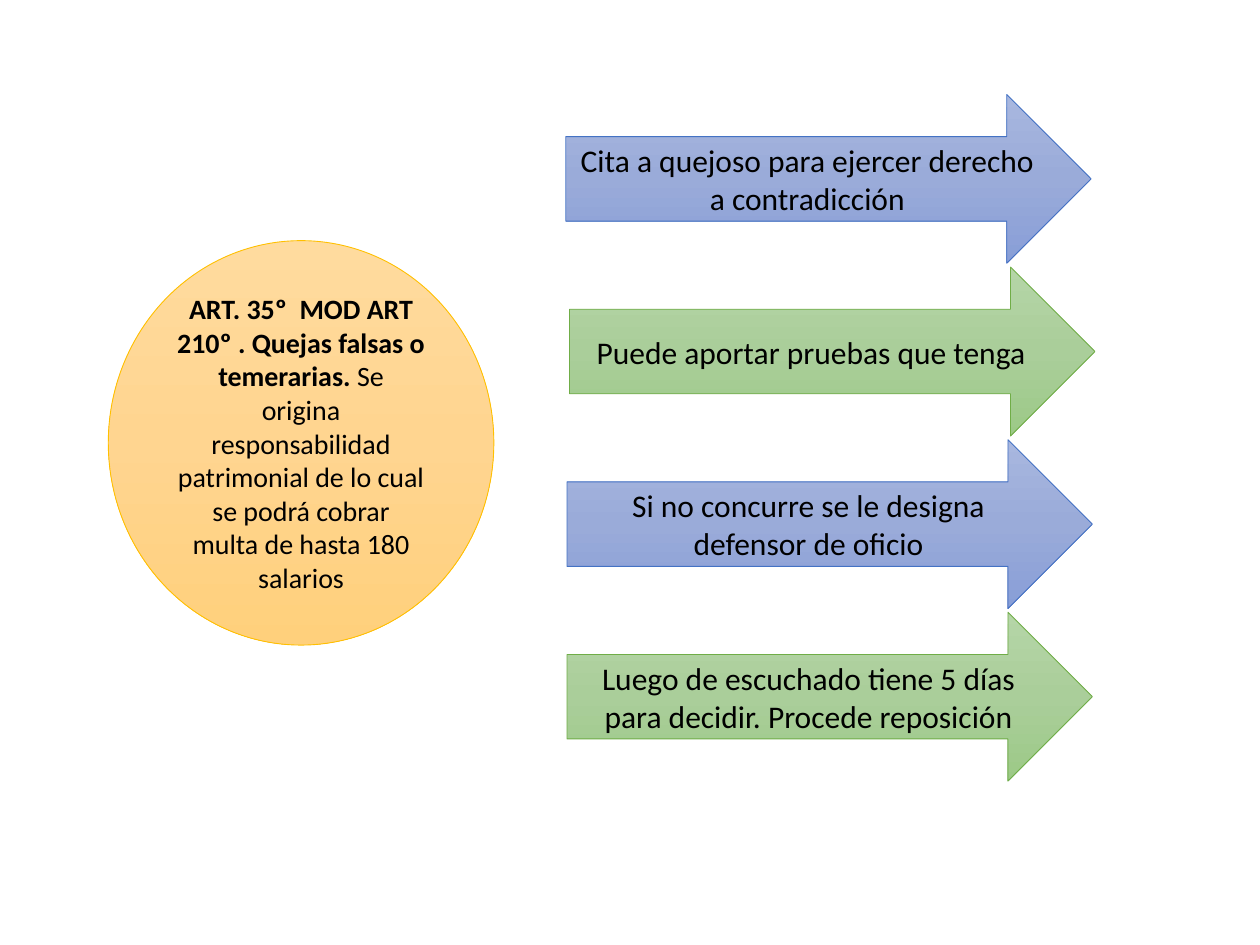
from copy import deepcopy

from pptx import Presentation
from pptx.dml.color import RGBColor
from pptx.enum.shapes import MSO_SHAPE
from pptx.enum.text import MSO_ANCHOR, PP_ALIGN
from pptx.util import Inches, Pt

OVAL = MSO_SHAPE.OVAL
ARROW = MSO_SHAPE.RIGHT_ARROW
MIDDLE = MSO_ANCHOR.MIDDLE
CENTER = PP_ALIGN.CENTER

BLACK = RGBColor(0x00, 0x00, 0x00)
GOLD_LINE = RGBColor(0xFF, 0xC0, 0x00)
GOLD = [RGBColor(0xFF, 0xDB, 0x9E), RGBColor(0xFF, 0xD5, 0x90), RGBColor(0xFF, 0xD0, 0x7C)]
BLUE_LINE = RGBColor(0x44, 0x72, 0xC4)
BLUE = [RGBColor(0xA8, 0xB7, 0xDF), RGBColor(0x9A, 0xAB, 0xD9), RGBColor(0x88, 0x9E, 0xD7)]
GREEN_LINE = RGBColor(0x70, 0xAD, 0x47)
GREEN = [RGBColor(0xB5, 0xD5, 0xA7), RGBColor(0xAA, 0xCE, 0x9A), RGBColor(0x9C, 0xC9, 0x87)]

FIRST_ROW = 0.75
ROW_STEP = 1.37
ARROW_WIDTH = 4.17
ARROW_HEIGHT = 1.34

deck = Presentation()
deck.slide_width = Inches(10)
deck.slide_height = Inches(7.5)
page = deck.slides.add_slide(deck.slide_layouts[6])


def add_gradient_shape(kind, left, top, width, height, colors, line_color, spans, size):
    shape = page.shapes.add_shape(kind, Inches(left), Inches(top), Inches(width), Inches(height))
    shape.shadow.inherit = False
    shape.fill.gradient()
    shape.fill.gradient_angle = 270
    stop_list = shape.element.xpath(".//a:gsLst")[0]
    stop_list.insert(1, deepcopy(stop_list[0]))
    for stop, position, color in zip(shape.fill.gradient_stops, (0, 0.5, 1), colors):
        stop.position = position
        stop.color.rgb = color
    shape.line.color.rgb = line_color
    shape.line.width = Pt(0.5)
    shape.text_frame.word_wrap = True
    shape.text_frame.vertical_anchor = MIDDLE
    para = shape.text_frame.paragraphs[0]
    para.alignment = CENTER
    para.font.name = "Calibri"
    para.font.size = Pt(size)
    para.font.color.rgb = BLACK
    for text, bold in spans:
        span = para.add_run()
        span.text = text
        span.font.bold = bold


article = [
    ("ART. 35º  MOD ART 210º . Quejas falsas o temerarias. ", True),
    ("Se origina responsabilidad patrimonial de lo cual se podrá cobrar multa de hasta 180 salarios", False),
]
add_gradient_shape(OVAL, 0.86, 1.91, 3.06, 3.21, GOLD, GOLD_LINE, article, 16)

steps = [
    (4.49, "Cita a quejoso para ejercer derecho a contradicción", BLUE, BLUE_LINE),
    (4.52, "Puede aportar pruebas que tenga", GREEN, GREEN_LINE),
    (4.5, "Si no concurre se le designa defensor de oficio", BLUE, BLUE_LINE),
    (4.5, "Luego de escuchado tiene 5 días para decidir. Procede reposición", GREEN, GREEN_LINE),
]
for row, (left, text, colors, line_color) in enumerate(steps):
    top = FIRST_ROW + row * ROW_STEP
    add_gradient_shape(ARROW, left, top, ARROW_WIDTH, ARROW_HEIGHT, colors, line_color, [(text, False)], 18)

deck.save("out.pptx")
